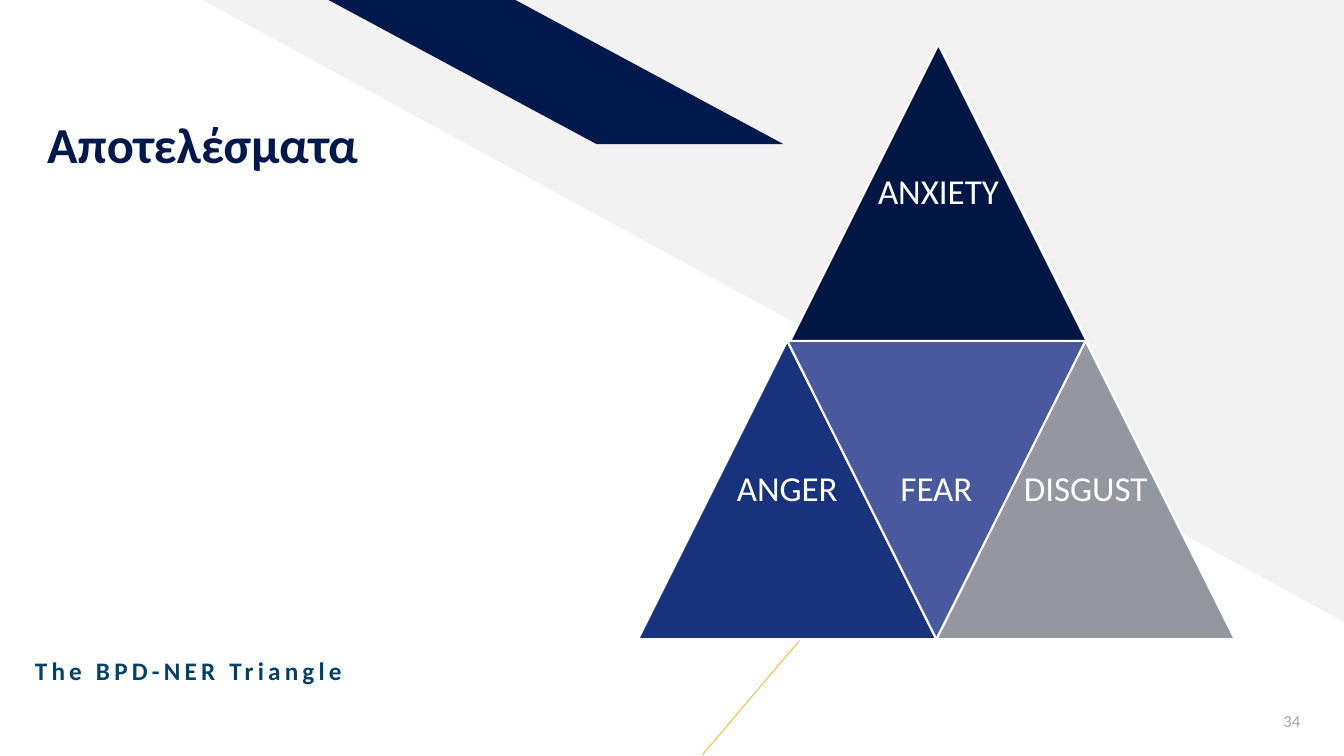
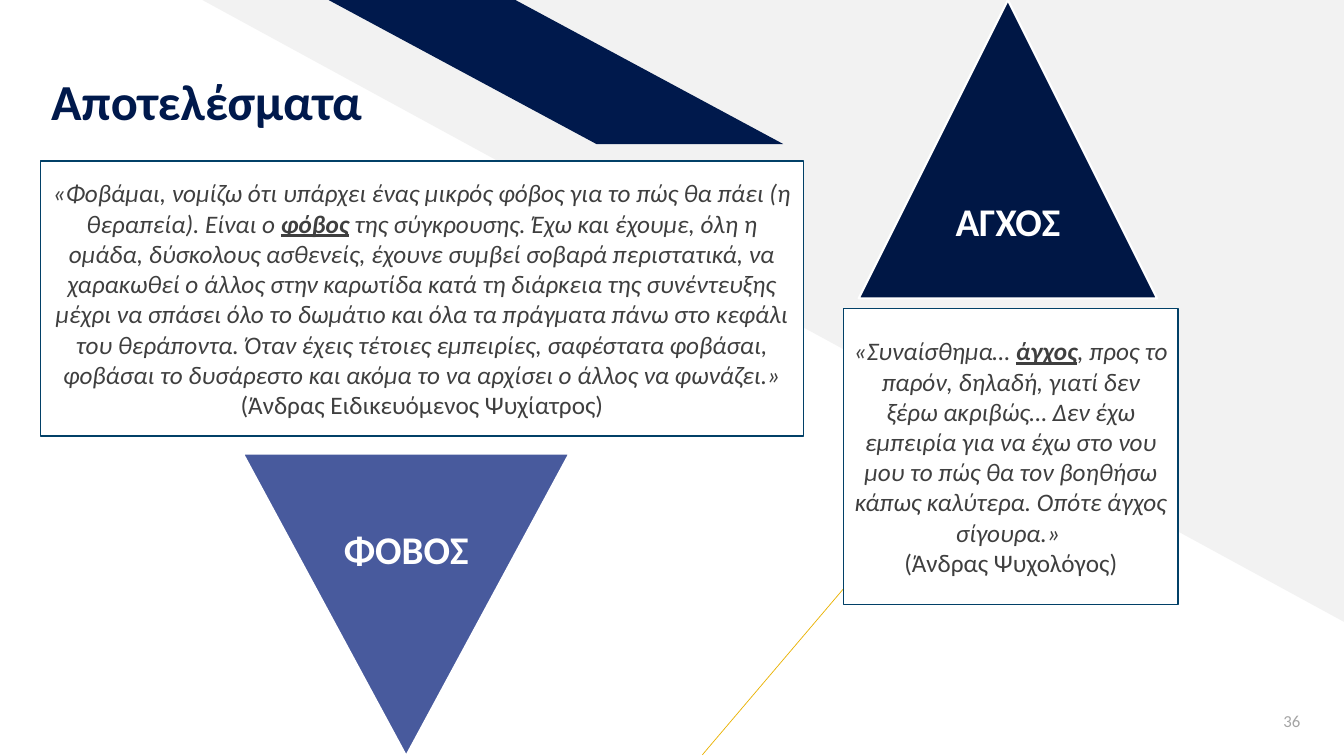
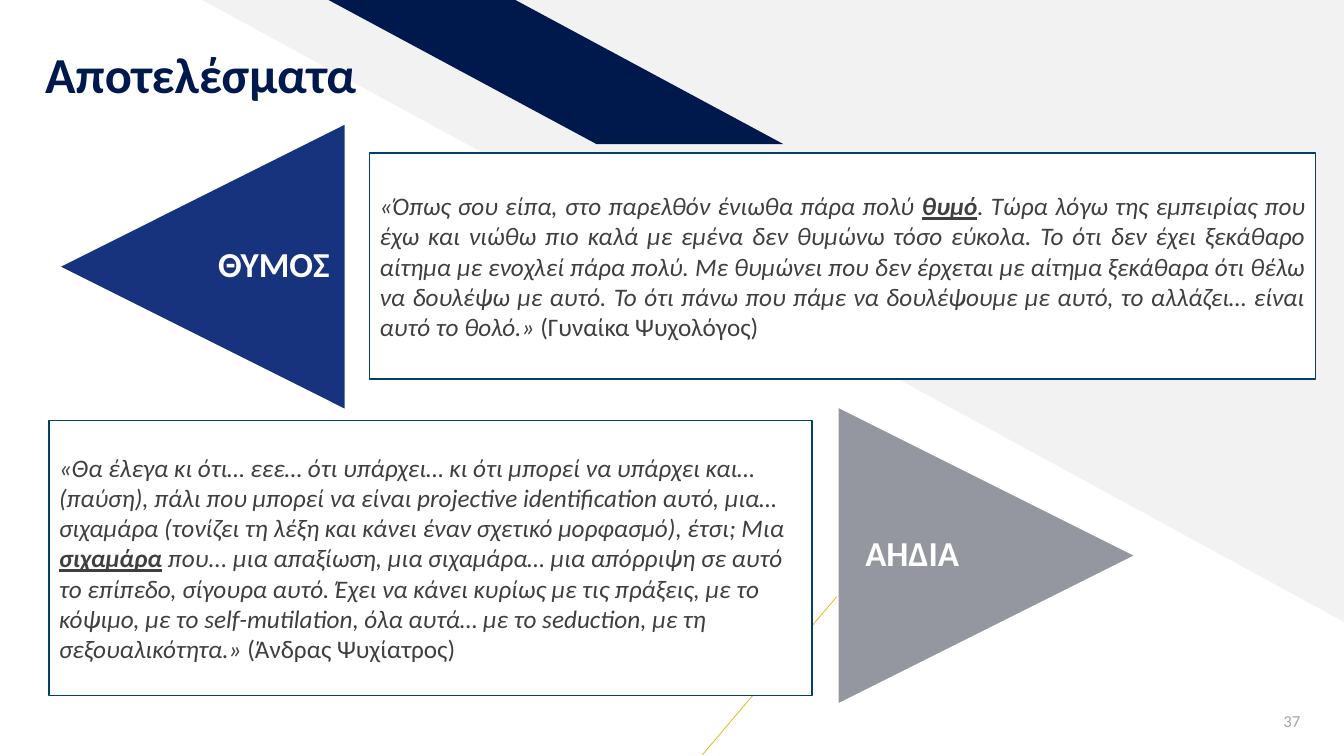
from dataclasses import dataclass

from lxml import etree
from pptx import Presentation
from pptx.dml.color import RGBColor
from pptx.enum.shapes import MSO_CONNECTOR, MSO_SHAPE as Shape
from pptx.enum.text import MSO_ANCHOR as Anchor, PP_ALIGN as Align
from pptx.oxml.ns import qn
from pptx.util import Cm, Pt


@dataclass(frozen=True)
class Theme:
    font: str = "Calibri"
    white: str = "FFFFFF"
    pale: str = "F2F2F2"
    band: str = "00194C"
    gold: str = "EAB200"
    teal: str = "014067"
    ink: str = "3F3F3F"
    number: str = "A5A5A5"
    anxiety: str = "001745"
    anger: str = "18337E"
    fear: str = "485A9D"
    disgust: str = "9597A0"
    title_size: int = 36
    keyword_size: int = 28
    label_size: int = 25
    body_size: int = 18
    number_size: int = 12


THEME = Theme()
DECK_SIZE = (33.87, 19.05)
TRIANGLE_SIDE = 7.52
# Share of the free room that lies left of and above a label, by rotation
LABEL_PLACE = {0: (0.5, 1), 90: (0, 0.5), 180: (0.5, 0), 270: (1, 0.5)}


def rgb(code):
    return RGBColor.from_string(code)


def write(shape, paragraphs, size=THEME.body_size, color=THEME.ink, bold=False,
          italic=False, align=Align.LEFT, anchor=Anchor.MIDDLE, line_spacing=None,
          tracking=None, margins=(0.25, 0.13, 0.25, 0.13)):
    """Paragraphs are one string, or lists of (text, font overrides) spans."""
    if isinstance(paragraphs, str):
        paragraphs = [[(paragraphs, {})]]
    frame = shape.text_frame
    frame.word_wrap = True
    frame.vertical_anchor = anchor
    for side, margin in zip(("left", "top", "right", "bottom"), margins):
        setattr(frame, f"margin_{side}", Cm(margin))
    for index, spans in enumerate(paragraphs):
        para = frame.add_paragraph() if index else frame.paragraphs[0]
        para.alignment = align
        if line_spacing:
            para.line_spacing = line_spacing
        for text, overrides in spans:
            span = para.add_run()
            span.text = text
            span.font.name = THEME.font
            span.font.size = Pt(size)
            span.font.color.rgb = rgb(color)
            settings = {"bold": bold, "italic": italic, **overrides}
            for name, value in settings.items():
                setattr(span.font, name, value)
            if tracking:
                span.font._element.set("spc", str(tracking * 100))


def add_text(slide, box, text, **style):
    write(slide.shapes.add_textbox(*map(Cm, box)), text, **style)


def add_filled(slide, kind, box, fill, line=None, width=1, rotation=0):
    shape = slide.shapes.add_shape(kind, *map(Cm, box))
    shape.shadow.inherit = False
    shape.rotation = rotation
    shape.fill.solid()
    shape.fill.fore_color.rgb = rgb(fill)
    if line:
        shape.line.color.rgb = rgb(line)
        shape.line.width = Pt(width)
    else:
        shape.line.fill.background()
    return shape


def add_backdrop(slide):
    add_filled(slide, Shape.RIGHT_TRIANGLE, (5.1, 0, 28.77, 15.67), THEME.pale, rotation=180)
    band = add_filled(slide, Shape.PARALLELOGRAM, (8.28, 0, 11.46, 3.63), THEME.band)
    band.adjustments[0] = 1.86
    band.element.spPr.xfrm.set("flipH", "1")
    ray = slide.shapes.add_connector(
        MSO_CONNECTOR.STRAIGHT, *map(Cm, (17.7, 19.02, 21.95, 14.02)))
    ray.line.color.rgb = rgb(THEME.gold)
    ray.line.width = Pt(0.5)
    etree.SubElement(ray.element.spPr, qn("a:effectLst"))


def add_page(deck, number, title_left, title_top):
    slide = deck.slides.add_slide(deck.slide_layouts[6])
    add_backdrop(slide)
    add_text(slide, (30.96, 17.65, 2.06, 1.02), str(number), size=THEME.number_size,
             color=THEME.number, align=Align.RIGHT)
    add_text(slide, (title_left, title_top, 28.14, 1.52), "Αποτελέσματα",
             size=THEME.title_size, color=THEME.band, bold=True, anchor=Anchor.BOTTOM,
             line_spacing=0.9, margins=(0.25, 0.13, 0.25, 0))
    return slide


def add_triangle(slide, left, top, label, fill, width=TRIANGLE_SIDE, height=TRIANGLE_SIDE,
                 rotation=0, label_share=0.5, label_drop=0, size=THEME.label_size, bold=True):
    """Draw a triangle with its label in label_share of its frame, against the base."""
    add_filled(slide, Shape.ISOSCELES_TRIANGLE, (left, top, width, height), fill,
               line=THEME.white, width=1.5, rotation=rotation)
    across, down = LABEL_PLACE[rotation]
    room = 1 - label_share
    box = (left + across * room * width, top + down * room * height + label_drop,
           label_share * width, label_share * height)
    add_text(slide, box, label, size=size, color=THEME.white, bold=bold,
             align=Align.CENTER, line_spacing=0.9, margins=(0.25,) * 4)


def add_quote(slide, box, before, keyword, after, speaker, align, speaker_below=False):
    quote = [(before, {}), (keyword, {"bold": True, "underline": True}), (after, {})]
    credit = [(speaker, {"italic": False})]
    paragraphs = [quote, credit] if speaker_below else [quote + credit]
    panel = add_filled(slide, Shape.RECTANGLE, box, THEME.white, line=THEME.teal)
    write(panel, paragraphs, italic=True, align=align)


def build_emotion_triangle(deck):
    slide = add_page(deck, 34, 0.94, 2.87)
    add_text(slide, (0.63, 16.46, 16.84, 1.7), "The BPD-NER Triangle", color=THEME.teal,
             bold=True, anchor=Anchor.TOP, line_spacing=0.9, tracking=3)
    whole = {"label_share": 1, "bold": False}
    add_triangle(slide, 19.89, 1.12, "ANXIETY", THEME.anxiety, **whole)
    lower_row = (("ANGER", THEME.anger, 0), ("FEAR", THEME.fear, 180),
                 ("DISGUST", THEME.disgust, 0))
    for index, (label, fill, rotation) in enumerate(lower_row):
        add_triangle(slide, 16.08 + index * TRIANGLE_SIDE / 2, 8.59, label, fill,
                     rotation=rotation, **whole)


def build_anxiety_and_fear(deck):
    slide = add_page(deck, 36, 1.04, 1.78)
    add_triangle(slide, 21.64, 0, "ΑΓΧΟΣ", THEME.anxiety, size=THEME.keyword_size)
    add_quote(
        slide, (21.26, 7.77, 8.43, 7.47), "«Συναίσθημα… ", "άγχος",
        ", προς το παρόν, δηλαδή, γιατί δεν ξέρω ακριβώς… Δεν έχω εμπειρία για να έχω "
        "στο νου μου το πώς θα τον βοηθήσω κάπως καλύτερα. Οπότε άγχος σίγουρα.» ",
        "(Άνδρας Ψυχολόγος)", Align.CENTER, speaker_below=True)
    add_triangle(slide, 6.12, 11.43, "ΦΟΒΟΣ", THEME.fear, width=8.23, height=7.62,
                 rotation=180, label_drop=0.56, size=THEME.keyword_size)
    add_quote(
        slide, (1.02, 4.06, 19.23, 6.93),
        "«Φοβάμαι, νομίζω ότι υπάρχει ένας μικρός φόβος για το πώς θα πάει "
        "(η θεραπεία). Είναι ο ", "φόβος",
        " της σύγκρουσης. Έχω και έχουμε, όλη η ομάδα, δύσκολους ασθενείς, έχουνε "
        "συμβεί σοβαρά περιστατικά, να χαρακωθεί ο άλλος στην καρωτίδα κατά τη "
        "διάρκεια της συνέντευξης μέχρι να σπάσει όλο το δωμάτιο και όλα τα πράγματα "
        "πάνω στο κεφάλι του θεράποντα. Όταν έχεις τέτοιες εμπειρίες, σαφέστατα "
        "φοβάσαι, φοβάσαι το δυσάρεστο και ακόμα το να αρχίσει ο άλλος να φωνάζει.» ",
        "(Άνδρας Ειδικευόμενος Ψυχίατρος)", Align.CENTER)


def build_anger_and_disgust(deck):
    slide = add_page(deck, 37, 0.89, 1.12)
    add_quote(
        slide, (1.24, 10.59, 19.23, 6.93),
        "«Θα έλεγα κι ότι… εεε… ότι υπάρχει… κι ότι μπορεί να υπάρχει και… (παύση), "
        "πάλι που μπορεί να είναι projective identification αυτό, μια… σιχαμάρα "
        "(τονίζει τη λέξη και κάνει έναν σχετικό μορφασμό), έτσι; Μια ", "σιχαμάρα",
        " που... μια απαξίωση, μια σιχαμάρα… μια απόρριψη σε αυτό το επίπεδο, σίγουρα "
        "αυτό. Έχει να κάνει κυρίως με τις πράξεις, με το κόψιμο, με το "
        "self-mutilation, όλα αυτά… με το seduction, με τη σεξουαλικότητα.» ",
        "(Άνδρας Ψυχίατρος)", Align.LEFT)
    add_triangle(slide, 21.11, 10.24, "ΑΗΔΙΑ", THEME.disgust, rotation=90)
    add_quote(
        slide, (9.32, 3.86, 23.83, 5.69),
        "«Όπως σου είπα, στο παρελθόν ένιωθα πάρα πολύ ", "θυμό",
        ". Τώρα λόγω της εμπειρίας που έχω και νιώθω πιο καλά με εμένα δεν θυμώνω "
        "τόσο εύκολα. Το ότι δεν έχει ξεκάθαρο αίτημα με ενοχλεί πάρα πολύ. Με θυμώνει "
        "που δεν έρχεται με αίτημα ξεκάθαρα ότι θέλω να δουλέψω με αυτό. Το ότι πάνω "
        "που πάμε να δουλέψουμε με αυτό, το αλλάζει… είναι αυτό το θολό.» ",
        "(Γυναίκα Ψυχολόγος)", Align.JUSTIFY)
    add_triangle(slide, 1.47, 3.1, "ΘΥΜΟΣ", THEME.anger, width=7.24, height=7.24,
                 rotation=270)


def main():
    deck = Presentation()
    deck.slide_width, deck.slide_height = map(Cm, DECK_SIZE)
    build_emotion_triangle(deck)
    build_anxiety_and_fear(deck)
    build_anger_and_disgust(deck)
    deck.save("out.pptx")


if __name__ == "__main__":
    main()
